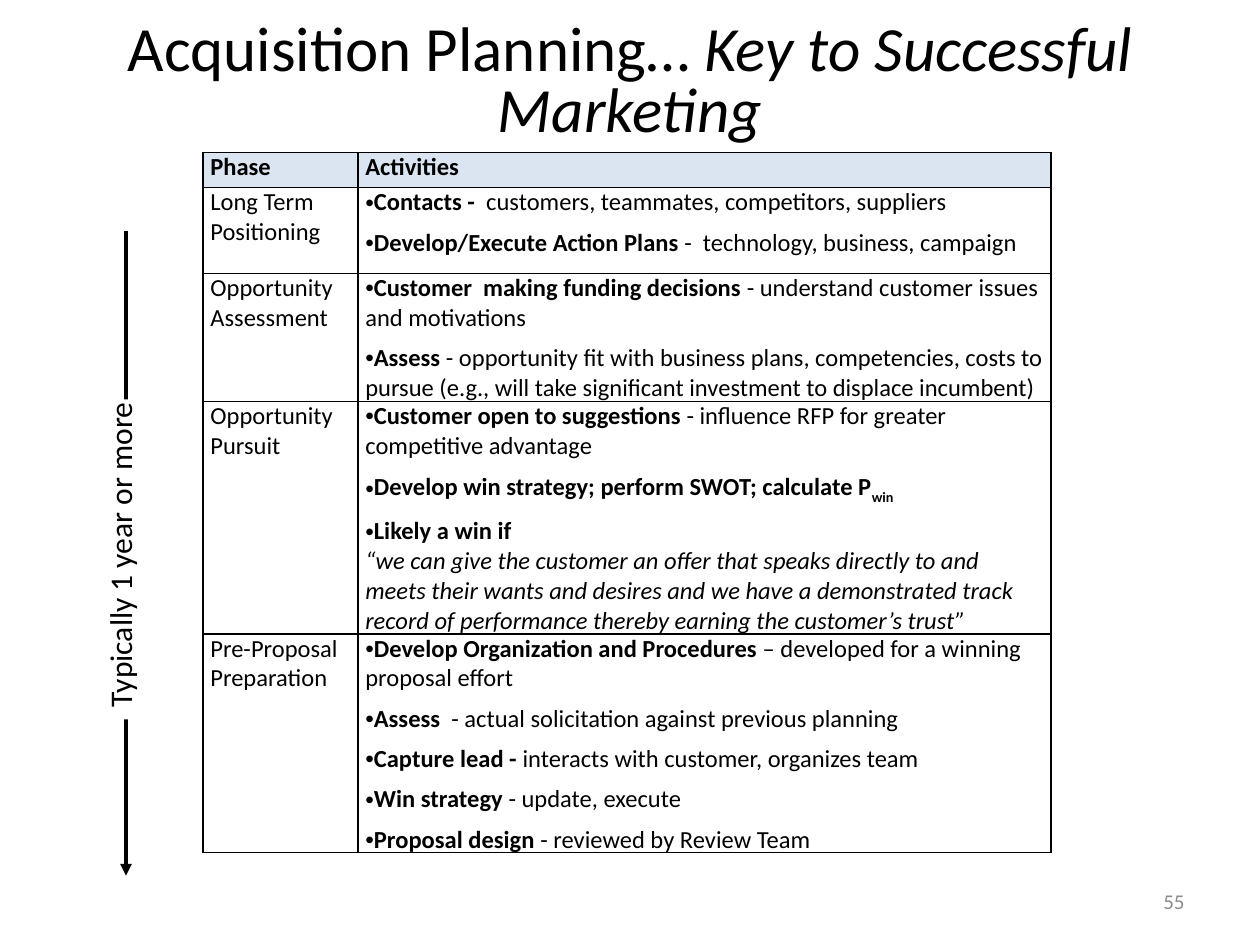
import dataclasses

import pptx
import pptx.dml.color
import pptx.enum.shapes
import pptx.enum.text
import pptx.oxml
import pptx.oxml.ns
import pptx.util

ALIGN = pptx.enum.text.PP_ALIGN
ANCHOR = pptx.enum.text.MSO_ANCHOR
AUTO = pptx.enum.text.MSO_AUTO_SIZE


@dataclasses.dataclass(frozen=True)
class Theme:
    font: str = "Calibri"
    ink: str = "000000"
    paper: str = "FFFFFF"
    header: str = "DBE5F1"
    muted: str = "8C8C8C"
    title: int = 36
    body: int = 14
    label: int = 18
    number: int = 12


THEME = Theme()
WIDTH, HEIGHT = pptx.util.Inches(10), pptx.util.Inches(7.5)

BOLD = {"bold": True}
ITALIC = {"italic": True}

# Each phase: name, row height, activities as (bold lead, plain detail) or run lists
PHASES = [
    ("Long Term Positioning", 9.07, [
        ("Contacts -  ", "customers, teammates, competitors, suppliers"),
        ("Develop/Execute Action Plans", " -  technology, business, campaign"),
    ]),
    ("Opportunity Assessment", 11.87, [
        ("Customer  making funding decisions ",
         "- understand customer issues and motivations"),
        ("Assess ", "- opportunity fit with business plans, competencies, costs to "
         "pursue (e.g., will take significant investment to displace incumbent)"),
    ]),
    ("Opportunity Pursuit", 21.07, [
        ("Customer open to suggestions ",
         "- influence RFP for greater competitive advantage"),
        [("Develop win strategy; perform SWOT; calculate P", BOLD),
         ("win", {"bold": True, "baseline": -30})],
        [("Likely a win if \n", BOLD),
         ("“we can give the customer an offer that speaks directly to and meets "
          "their wants and desires and we have a demonstrated track record of "
          "performance thereby earning the customer’s trust”", ITALIC)],
    ]),
    ("Pre-Proposal Preparation", 20.27, [
        ("Develop Organization and Procedures ",
         "– developed for a winning proposal effort"),
        ("Assess ", " - actual solicitation against previous planning"),
        ("Capture lead - ", "interacts with customer, organizes team"),
        ("Win strategy ", "- update, execute"),
        ("Proposal design ", "- reviewed by Review Team"),
    ]),
]
HEADER_ROW = 3.73
PHASE_COLUMNS = (12.3, 55)


def columns(count):
    """Length of so many hundredths of the slide width."""
    return round(WIDTH * count / 100)


def rows(count):
    """Length of so many hundredths of the slide height."""
    return round(HEIGHT * count / 100)


def place(box):
    left, top, width, height = box
    return columns(left), rows(top), columns(width), rows(height)


def rgb(color):
    return pptx.dml.color.RGBColor.from_string(color)


def add_text(paragraph, text, size=THEME.body, color=THEME.ink, bold=False,
             italic=False, baseline=0):
    for index, line in enumerate(text.split("\n")):
        if index:
            paragraph.add_line_break()
        if not line:
            continue
        run = paragraph.add_run()
        run.text = line
        run.font.name, run.font.size = THEME.font, pptx.util.Pt(size)
        run.font.bold, run.font.italic = bold, italic
        run.font.color.rgb = rgb(color)
        if baseline:
            run.font._element.set("baseline", str(baseline * 1000))


def add_xml(parent, xml):
    namespace = pptx.oxml.ns.nsdecls("a")
    parent.append(pptx.oxml.parse_xml(xml.replace("/>", f" {namespace}/>", 1)
                                      if xml.endswith("/>") and xml.count("<") == 1
                                      else xml.replace(">", f" {namespace}>", 1)))


def make_bullet(paragraph):
    paragraph.space_after = pptx.util.Pt(6)
    properties = paragraph._p.get_or_add_pPr()
    properties.set("marL", "0")
    properties.set("indent", str(-columns(1)))
    add_xml(properties, '<a:buFont typeface="Arial"/>')
    add_xml(properties, '<a:buChar char="•"/>')


def format_cell(cell, fill=None):
    cell.margin_left = cell.margin_right = columns(0.6)
    cell.margin_top = cell.margin_bottom = 0
    for side in "LRTB":
        add_xml(cell._tc.get_or_add_tcPr(),
                f'<a:ln{side} w="{pptx.util.Pt(1)}"><a:solidFill>'
                f'<a:srgbClr val="{THEME.ink}"/></a:solidFill></a:ln{side}>')
    if fill:
        cell.fill.solid()
        cell.fill.fore_color.rgb = rgb(fill)
    else:
        cell.fill.background()


def fill_activities(frame, activities):
    for index, activity in enumerate(activities):
        paragraph = frame.add_paragraph() if index else frame.paragraphs[0]
        make_bullet(paragraph)
        if isinstance(activity, tuple):
            lead, detail = activity
            activity = [(lead, BOLD), (detail, {})]
        for text, style in activity:
            add_text(paragraph, text, **style)


def build_title(slide, box):
    title = slide.shapes.title
    title.left, title.top, title.width, title.height = place(box)
    frame = title.text_frame
    frame.auto_size, frame.word_wrap = AUTO.NONE, True
    frame.vertical_anchor = ANCHOR.MIDDLE
    heading = frame.paragraphs[0]
    heading.alignment, heading.line_spacing = ALIGN.CENTER, 0.8
    add_text(heading, "Acquisition Planning… ", size=THEME.title)
    add_text(heading, "Key to Successful Marketing", size=THEME.title, italic=True)


def build_phase_table(slide, left, top):
    heights = [HEADER_ROW] + [height for _, height, _ in PHASES]
    box = (left, top, sum(PHASE_COLUMNS), sum(heights))
    table = slide.shapes.add_table(len(heights), 2, *place(box)).table
    for column, width in zip(table.columns, PHASE_COLUMNS):
        column.width = columns(width)
    for row, height in zip(table.rows, heights):
        row.height = rows(height)

    # Header row
    for cell, heading in zip(table.rows[0].cells, ("Phase", "Activities")):
        format_cell(cell, THEME.header)
        add_text(cell.text_frame.paragraphs[0], heading, bold=True)

    # One row for each phase
    for index, (phase, _, activities) in enumerate(PHASES, start=1):
        phase_cell, activity_cell = table.rows[index].cells
        format_cell(phase_cell)
        format_cell(activity_cell)
        add_text(phase_cell.text_frame.paragraphs[0], phase)
        fill_activities(activity_cell.text_frame, activities)


def build_timeline(slide, box):
    left, top, width, height = box
    center = columns(left + width / 2)

    # Downward arrow
    arrow = slide.shapes.add_connector(pptx.enum.shapes.MSO_CONNECTOR.STRAIGHT,
                                       center, rows(top), center, rows(top + height))
    arrow.line.color.rgb = rgb(THEME.ink)
    arrow.line.width = pptx.util.Pt(2.25)
    add_xml(arrow.line._get_or_add_ln(), '<a:tailEnd type="triangle"/>')
    add_xml(arrow._element.spPr, "<a:effectLst/>")

    # Duration label, reading upwards over the arrow
    duration = slide.shapes.add_textbox(*place((left, 42.27, width, 33.87)))
    duration.fill.solid()
    duration.fill.fore_color.rgb = rgb(THEME.paper)
    frame = duration.text_frame
    frame.word_wrap, frame.auto_size = False, AUTO.SHAPE_TO_FIT_TEXT
    frame._txBody.bodyPr.set("vert", "vert270")
    add_text(frame.paragraphs[0], "Typically 1 year or more", size=THEME.label)


def build_page_number(slide, box):
    frame = slide.shapes.add_textbox(*place(box)).text_frame
    frame.word_wrap, frame.vertical_anchor = True, ANCHOR.MIDDLE
    frame.paragraphs[0].alignment = ALIGN.RIGHT
    add_text(frame.paragraphs[0], "55", size=THEME.number, color=THEME.muted)


def main():
    deck = pptx.Presentation()
    deck.slide_width, deck.slide_height = WIDTH, HEIGHT
    slide = deck.slides.add_slide(deck.slide_layouts.get_by_name("Title Only"))
    build_title(slide, (5, 0.53, 90, 16.67))
    build_page_number(slide, (71.7, 92.67, 23.3, 5.33))
    build_phase_table(slide, 16.1, 16.13)
    build_timeline(slide, (7.5, 24.4, 5, 68.27))
    deck.save("out.pptx")


if __name__ == "__main__":
    main()
